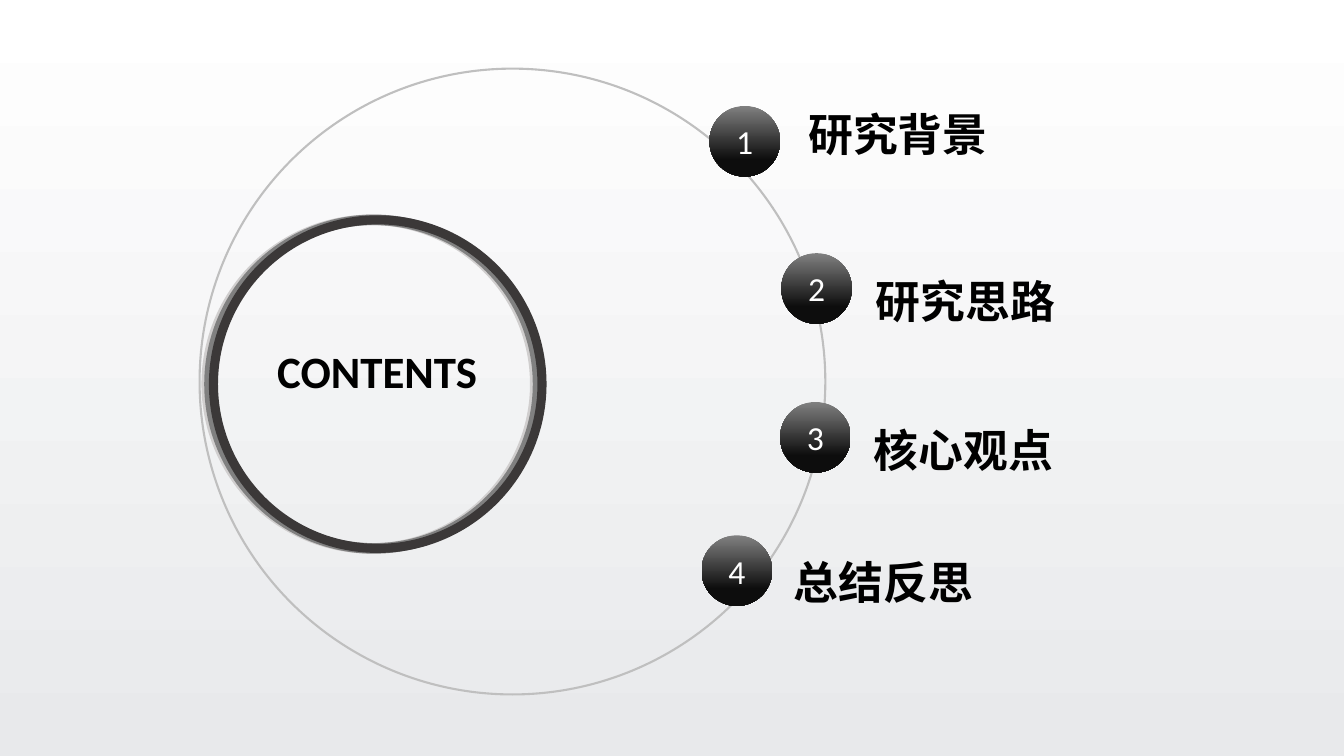
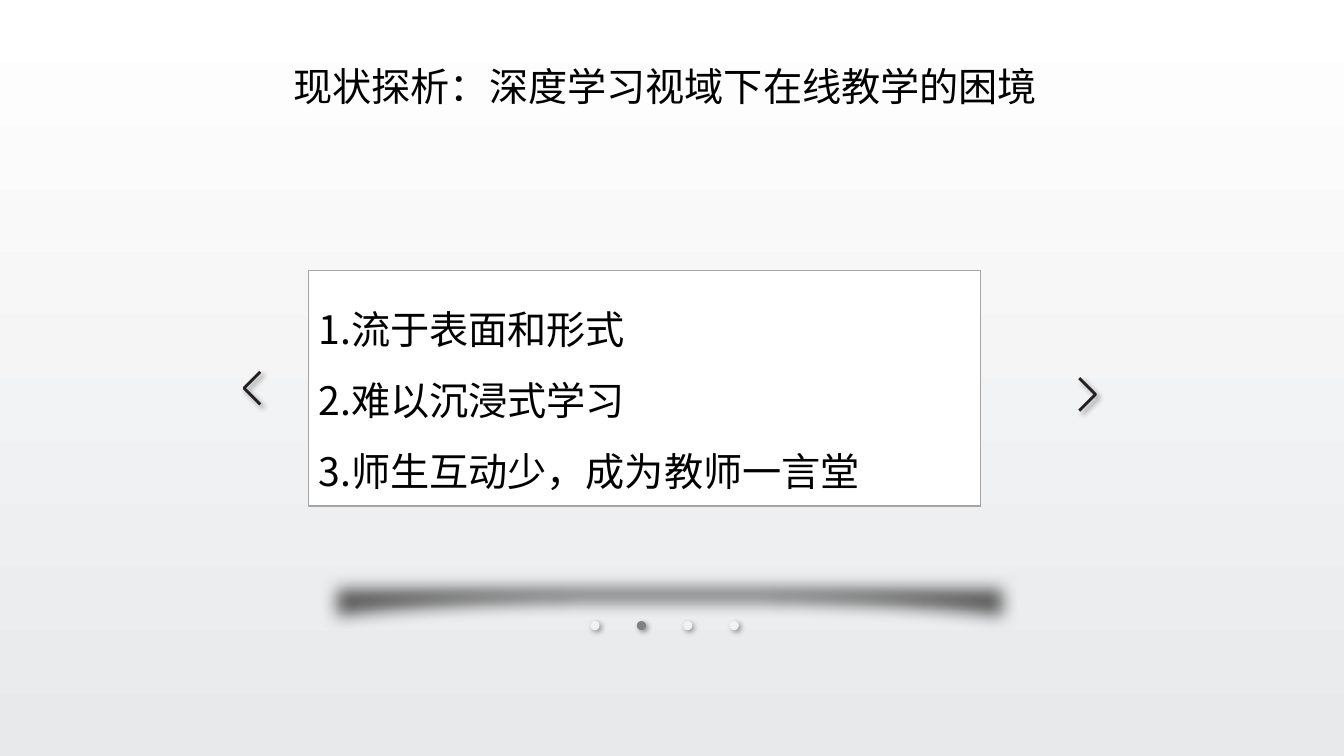
from math import cos, pi, sin

from lxml.etree import SubElement
from pptx import Presentation
from pptx.dml.color import RGBColor
from pptx.enum.shapes import MSO_SHAPE
from pptx.enum.text import MSO_ANCHOR, MSO_AUTO_SIZE, PP_ALIGN
from pptx.oxml import parse_xml
from pptx.oxml.ns import nsdecls, qn
from pptx.util import Cm, Pt

BLACK = RGBColor(0x00, 0x00, 0x00)
WHITE = RGBColor(0xFF, 0xFF, 0xFF)
MIST = RGBColor(0xE8, 0xE9, 0xEB)
PALE = RGBColor(0xF2, 0xF2, 0xF2)
SILVER = RGBColor(0xD0, 0xCE, 0xCE)
ORBIT = RGBColor(0xBF, 0xBF, 0xBF)
BORDER = RGBColor(0xA5, 0xA5, 0xA5)
GREY = RGBColor(0x80, 0x80, 0x80)
SHADE = RGBColor(0x59, 0x59, 0x59)
CHARCOAL = RGBColor(0x3B, 0x38, 0x38)
INK = RGBColor(0x23, 0x1F, 0x20)
NIGHT = RGBColor(0x0D, 0x0D, 0x0D)
LATIN, CJK = "Calibri", "Noto Sans CJK SC"

SOFT_EDGE = f'<a:softEdge {nsdecls("a")} rad="158750"/>'
DROP_SHADOW = (f'<a:outerShdw {nsdecls("a")} blurRad="50800" dist="%d" dir="2700000" '
               'algn="tl" rotWithShape="0"><a:srgbClr val="000000">'
               '<a:alpha val="40000"/></a:srgbClr></a:outerShdw>')


def style(sp, fill=None, line=None, width=1, effect=None):
    """Set fill, outline and effect; whatever is not given is switched off."""
    sp.shadow.inherit = False
    if fill is None:
        sp.fill.background()
    elif isinstance(fill, RGBColor):
        sp.fill.solid()
        sp.fill.fore_color.rgb = fill
    else:
        gradient(sp.fill, fill)
    if line is None:
        sp.line.fill.background()
    else:
        sp.line.color.rgb = line
        sp.line.width = Pt(width)
    if effect:
        sp._element.spPr.find(qn("a:effectLst")).append(parse_xml(effect))


def gradient(fill, stops):
    """Top-to-bottom gradient from two (position, colour) stops."""
    fill.gradient()
    fill.gradient_angle = 270
    for stop, (position, color) in zip(fill.gradient_stops, stops):
        stop.position = position
        stop.color.rgb = color


def write(tf, lines, size, font, color=BLACK, bold=False, align=PP_ALIGN.LEFT,
          spacing=1.0, wrap=True):
    """Write one run per paragraph in a vertically centred frame."""
    tf.word_wrap = wrap
    tf.auto_size = MSO_AUTO_SIZE.NONE
    tf.vertical_anchor = MSO_ANCHOR.MIDDLE
    for i, text in enumerate(lines):
        p = tf.add_paragraph() if i else tf.paragraphs[0]
        p.alignment = align
        p.line_spacing = spacing
        p.space_before = Pt(0)
        r = p.add_run()
        r.text = text
        r.font.size = Pt(size)
        r.font.bold = bold
        r.font.name = font
        r.font.color.rgb = color
        SubElement(r._r.rPr, qn("a:ea")).set("typeface", CJK)


def place(sp, left, top, width, height):
    sp.left, sp.top, sp.width, sp.height = Cm(left), Cm(top), Cm(width), Cm(height)


prs = Presentation()
prs.slide_width, prs.slide_height = Cm(33.87), Cm(19.05)

# Shared background
gradient(prs.slide_master.background.fill, [(0, WHITE), (1, MIST)])

# Slide 1: contents
s = prs.slides.add_slide(prs.slide_layouts[5])
place(s.shapes.title, 6.73, 8.53, 5.61, 1.63)
write(s.shapes.title.text_frame, ["CONTENTS"], 32, LATIN, bold=True, wrap=False)

# Three offset rings around the title
rings = s.shapes.add_group_shape()
for left, color, width in [(5.21, SILVER, 7.5), (5.28, GREY, 7.5), (5.38, CHARCOAL, 6.5)]:
    sp = rings.shapes.add_shape(MSO_SHAPE.OVAL, Cm(left), Cm(5.54), Cm(8.28), Cm(8.28))
    style(sp, line=color, width=width)

# Large orbit
sp = s.shapes.add_shape(MSO_SHAPE.OVAL, Cm(5.03), Cm(1.73), Cm(15.77), Cm(15.77))
style(sp, line=ORBIT, width=1.5)

# Numbered balls with their labels
chapters = [
    ("研究背景", (17.88, 2.67), (20.12, 2.54)),
    ("研究思路", (19.69, 6.38), (21.82, 6.76)),
    ("核心观点", (19.66, 10.13), (21.77, 10.52)),
    ("总结反思", (17.68, 13.49), (19.76, 13.84)),
]
for number, (label, ball, spot) in enumerate(chapters, 1):
    sp = s.shapes.add_shape(MSO_SHAPE.OVAL, Cm(ball[0]), Cm(ball[1]), Cm(1.78), Cm(1.78))
    style(sp, fill=[(0, GREY), (0.76, NIGHT)])
    tf = sp.text_frame
    tf.margin_left = tf.margin_right = tf.margin_top = tf.margin_bottom = 0
    write(tf, [str(number)], 24, LATIN, WHITE, align=PP_ALIGN.CENTER)
    tb = s.shapes.add_textbox(Cm(spot[0]), Cm(spot[1]), Cm(5.03), Cm(1.63))
    write(tb.text_frame, [label], 32, LATIN, bold=True, wrap=False)

# Slide 2: difficulties of online teaching
s = prs.slides.add_slide(prs.slide_layouts[1])
place(s.shapes.title, 7.14, 1.45, 20.04, 1.45)
write(s.shapes.title.text_frame, ["现状探析：深度学习视域下在线教学的困境"], 28, CJK)

# Framed list
body = s.placeholders[1]
place(body, 7.77, 6.81, 16.94, 5.94)
style(body, fill=WHITE, line=BORDER)
write(body.text_frame, ["1.流于表面和形式", "2.难以沉浸式学习", "3.师生互动少，成为教师一言堂"],
      28, CJK, spacing=1.5)
for p in body.text_frame.paragraphs:
    pPr = p._p.get_or_add_pPr()
    pPr.set("marL", "0")
    pPr.set("indent", "0")
    SubElement(pPr, qn("a:buNone"))

# Blurred curved shade: flat top, arched underside
left, right, top, bottom, crown = 8.08, 25.68, 14.43, 16.21, 15.54
middle, steps = (left + right) / 2, 40
arch = [(middle + (right - middle) * cos(pi * i / steps),
         bottom - (bottom - crown) * sin(pi * i / steps)) for i in range(steps + 1)]
fb = s.shapes.build_freeform(Cm(left), Cm(top))
fb.add_line_segments([(Cm(x), Cm(y)) for x, y in [(right, top)] + arch], close=True)
style(fb.convert_to_shape(), fill=SHADE, effect=SOFT_EDGE)

# Page dots, the second one active
for i in range(4):
    sp = s.shapes.add_shape(MSO_SHAPE.OVAL, Cm(14.88 + 1.17 * i), Cm(15.65), Cm(0.23), Cm(0.23))
    style(sp, fill=GREY if i == 1 else PALE, effect=DROP_SHADOW % Pt(2))

# Chevrons: tip position and the direction of the open side
for x, y, side in [(6.15, 9.78, 1), (27.61, 9.94, -1)]:
    back = Cm(x + 0.41 * side)
    fb = s.shapes.build_freeform(back, Cm(y + 0.41))
    fb.add_line_segments([(Cm(x), Cm(y)), (back, Cm(y - 0.41))], close=False)
    style(fb.convert_to_shape(), line=INK, width=2, effect=DROP_SHADOW % Pt(3))

prs.save("out.pptx")
